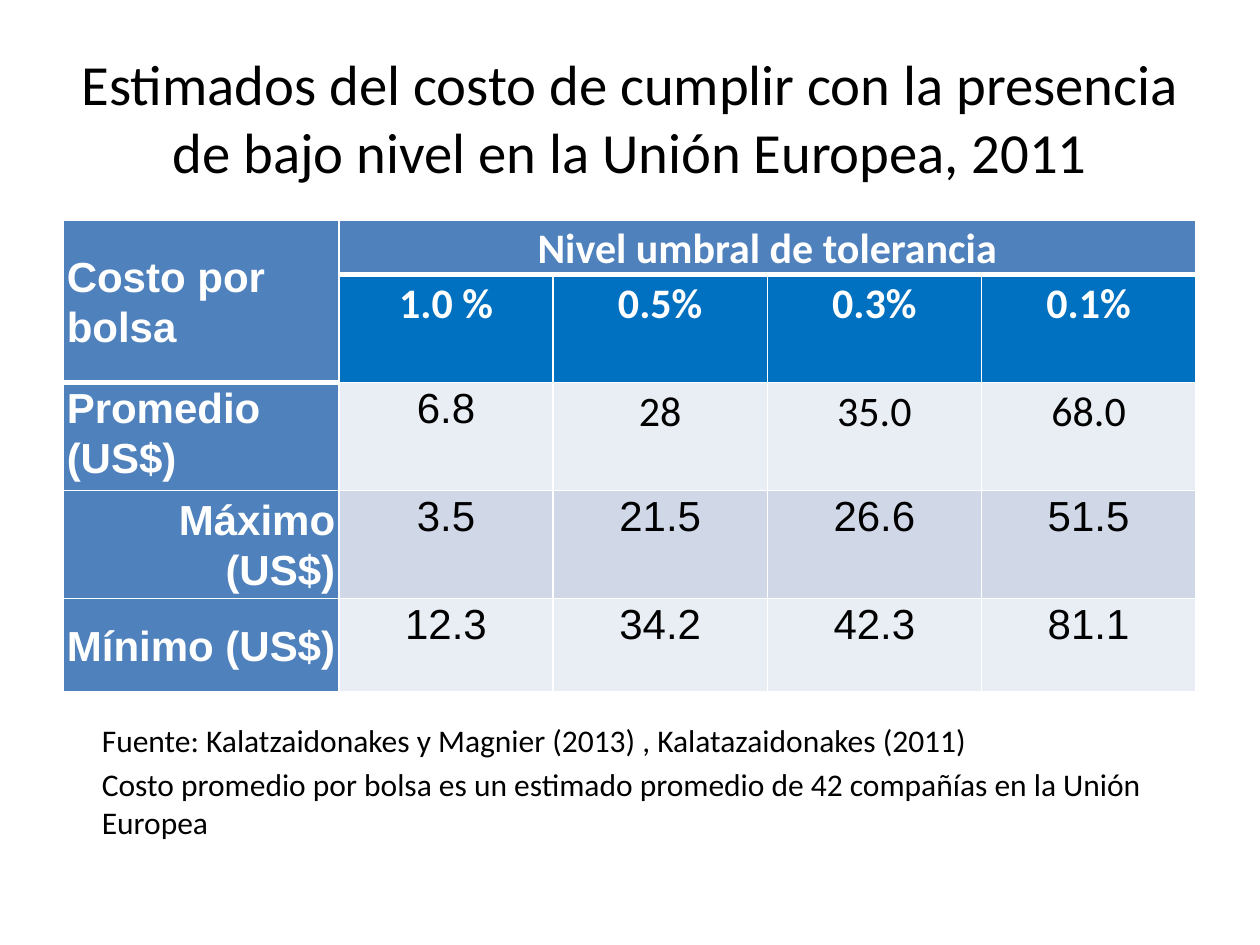
import dataclasses

import pptx
import pptx.dml.color
import pptx.enum.text
import pptx.oxml
import pptx.oxml.ns
import pptx.util

Inches = pptx.util.Inches
Pt = pptx.util.Pt
ALIGN = pptx.enum.text.PP_ALIGN
ANCHOR = pptx.enum.text.MSO_ANCHOR


@dataclasses.dataclass(frozen=True)
class Theme:
    """Colours, fonts and type sizes of the slide."""
    black: str = "000000"
    white: str = "FFFFFF"
    label: str = "4F81BD"
    threshold: str = "0070C0"
    bands: tuple = ("E9EDF4", "D0D8E8")
    body_font: str = "Calibri"
    table_font: str = "Arial"
    title_size: float = 32.4
    table_size: float = 24
    note_size: float = 18


THEME = Theme()
THRESHOLDS = ("1.0 %", "0.5%", "0.3%", "0.1%")
COSTS = (
    ("Promedio (US$)", ALIGN.LEFT, ("6.8", "28", "35.0", "68.0")),
    ("Máximo (US$)", ALIGN.RIGHT, ("3.5", "21.5", "26.6", "51.5")),
    ("Mínimo (US$)", ALIGN.RIGHT, ("12.3", "34.2", "42.3", "81.1")),
)
NOTES = (
    "Fuente: Kalatzaidonakes y Magnier (2013) , Kalatazaidonakes (2011)",
    "Costo promedio por bolsa es un estimado promedio de 42 compañías en la Unión Europea",
)


def write(p, text, size, font=THEME.body_font, color=THEME.black, bold=False,
          align=ALIGN.LEFT, spacing=None, before=None):
    """Write formatted text into a paragraph."""
    p.alignment = align
    p.line_spacing = spacing
    p.space_before = before
    r = p.add_run()
    r.text = text
    r.font.size = Pt(size)
    r.font.name = font
    r.font.bold = bold
    r.font.color.rgb = pptx.dml.color.RGBColor.from_string(color)


def add_box(s, box, anchor):
    """Add a wrapping text box and return its text frame."""
    tf = s.shapes.add_textbox(*map(Inches, box)).text_frame
    tf.word_wrap = True
    tf.vertical_anchor = anchor
    return tf


def add_title(s, box):
    """Place the centred title in its box."""
    tf = add_box(s, box, ANCHOR.MIDDLE)
    tf.margin_left = tf.margin_right = Inches(0.05)
    write(tf.paragraphs[0],
          "Estimados del costo de cumplir con la presencia de bajo nivel en la Unión Europea, 2011",
          THEME.title_size, align=ALIGN.CENTER)


def set_borders(cell, bottom):
    """Draw white cell borders with the given bottom width in points."""
    tc_pr = cell._tc.get_or_add_tcPr()
    for side, width in (("L", 1), ("R", 1), ("T", 1), ("B", bottom)):
        tc_pr.append(pptx.oxml.parse_xml(
            f'<a:ln{side} {pptx.oxml.ns.nsdecls("a")} w="{Pt(width)}"><a:solidFill>'
            f'<a:srgbClr val="{THEME.white}"/></a:solidFill></a:ln{side}>'))


def style_cell(cell, fill, bottom=1, anchor=ANCHOR.TOP):
    """Set the borders, fill, margins and anchor of a cell."""
    set_borders(cell, bottom)
    cell.fill.solid()
    cell.fill.fore_color.rgb = pptx.dml.color.RGBColor.from_string(fill)
    cell.margin_left = cell.margin_right = Inches(0.03)
    cell.margin_top = cell.margin_bottom = 0
    cell.vertical_anchor = anchor


def fill_cell(cell, text, fill, bottom=1, anchor=ANCHOR.TOP, **fmt):
    """Style a cell and write its text."""
    style_cell(cell, fill, bottom, anchor)
    write(cell.text_frame.paragraphs[0], text, THEME.table_size, spacing=1.07, **fmt)


def add_cost_table(s, box):
    """Place the table of costs by tolerance threshold in its box."""
    table = s.shapes.add_table(5, 5, *map(Inches, box)).table
    for column, width in zip(table.columns, (2.19, 1.7, 1.7, 1.7, 1.7)):
        column.width = Inches(width)
    for row, height in zip(table.rows, (0.43, 0.8, 0.8, 0.8, 0.74)):
        row.height = Inches(height)
    head = dict(color=THEME.white, bold=True)
    for i in range(2, 5):
        style_cell(table.cell(0, i), THEME.label, 3)
    style_cell(table.cell(1, 0), THEME.label, 3)
    table.cell(0, 0).merge(table.cell(1, 0))
    table.cell(0, 1).merge(table.cell(0, 4))
    fill_cell(table.cell(0, 0), "Costo por bolsa", THEME.label, 3, ANCHOR.MIDDLE,
              font=THEME.table_font, **head)
    fill_cell(table.cell(0, 1), "Nivel umbral de tolerancia", THEME.label, 3,
              align=ALIGN.CENTER, **head)
    for j, text in enumerate(THRESHOLDS, 1):
        fill_cell(table.cell(1, j), text, THEME.threshold, align=ALIGN.CENTER, **head)
    for i, (label, align, values) in enumerate(COSTS):
        anchor = ANCHOR.MIDDLE if i else ANCHOR.TOP
        fill_cell(table.cell(i + 2, 0), label, THEME.label, anchor=anchor,
                  font=THEME.table_font, align=align, **head)
        for j, value in enumerate(values, 1):
            font = THEME.body_font if i == 0 and j > 1 else THEME.table_font
            fill_cell(table.cell(i + 2, j), value, THEME.bands[i % 2],
                      font=font, align=ALIGN.CENTER)


def add_notes(s, box):
    """Place the source notes in their box."""
    tf = add_box(s, box, ANCHOR.TOP)
    for i, text in enumerate(NOTES):
        p = tf.add_paragraph() if i else tf.paragraphs[0]
        write(p, text, THEME.note_size, before=Pt(3.6))


def main():
    """Build and save the slide."""
    prs = pptx.Presentation()
    prs.slide_width, prs.slide_height = Inches(10), Inches(7.5)
    s = prs.slides.add_slide(prs.slide_layouts[6])
    add_title(s, (0.5, 0.3, 9, 1.25))
    add_cost_table(s, (0.5, 1.75, 9, 3.4))
    add_notes(s, (0.71, 5.67, 8.58, 2.31))
    prs.save("out.pptx")


if __name__ == "__main__":
    main()
